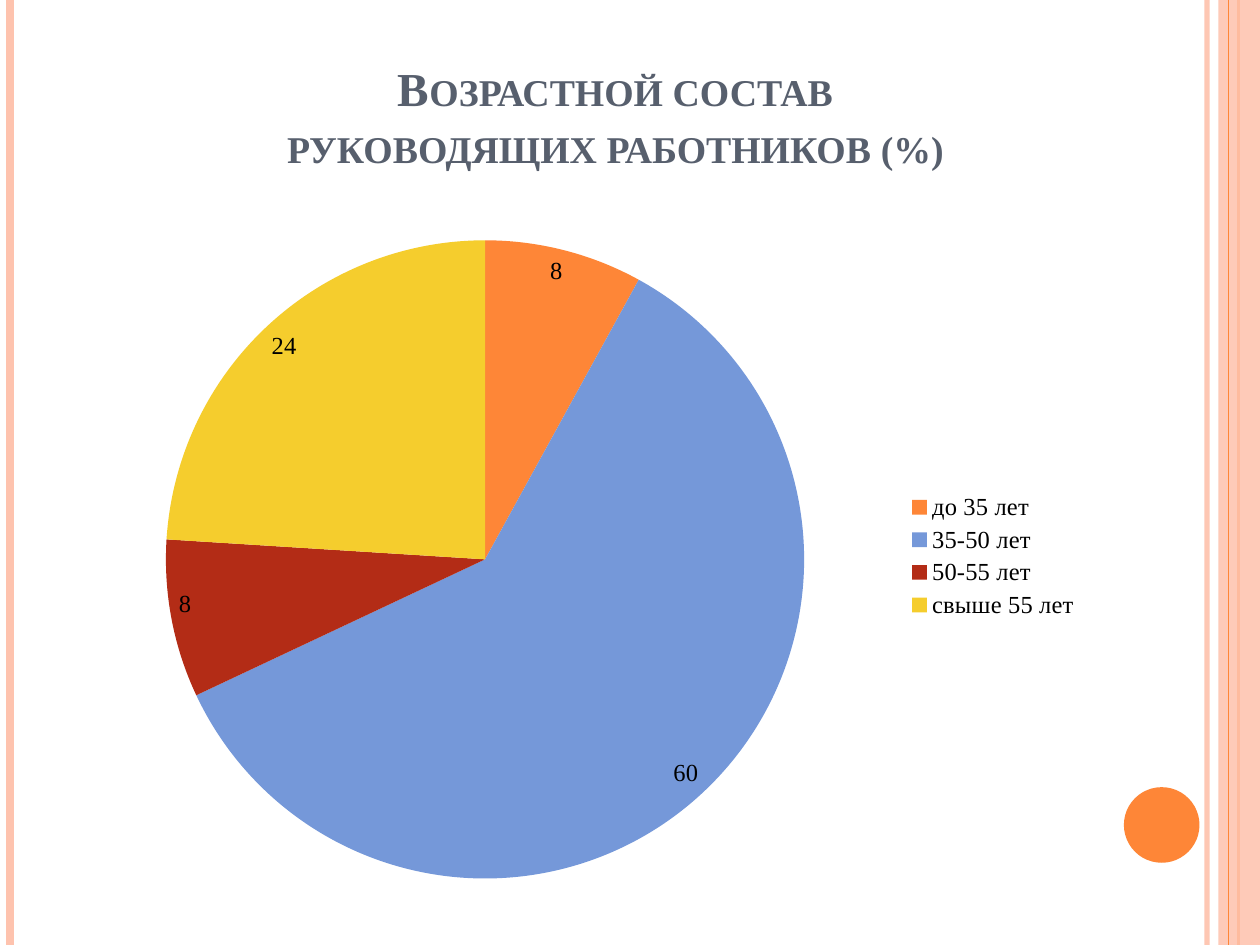
from lxml import etree
from pptx import Presentation
from pptx.chart.data import CategoryChartData
from pptx.dml.color import RGBColor
from pptx.enum.chart import XL_CHART_TYPE as ChartType
from pptx.enum.chart import XL_LABEL_POSITION as LabelPosition
from pptx.enum.chart import XL_LEGEND_POSITION as LegendPosition
from pptx.enum.shapes import MSO_CONNECTOR as Connector
from pptx.enum.shapes import MSO_SHAPE as Shape
from pptx.enum.text import MSO_ANCHOR as Anchor
from pptx.enum.text import MSO_AUTO_SIZE as AutoSize
from pptx.enum.text import PP_ALIGN as Align
from pptx.oxml import parse_xml
from pptx.oxml.ns import nsdecls, qn
from pptx.util import Inches, Pt

PEACH = RGBColor(0xFE, 0xC3, 0xAE)
ORANGE = RGBColor(0xFE, 0x86, 0x37)
BLUE = RGBColor(0x75, 0x98, 0xD9)
RED = RGBColor(0xB3, 0x2C, 0x16)
YELLOW = RGBColor(0xF5, 0xCD, 0x2D)
SLATE = RGBColor(0x57, 0x5F, 0x6D)
BLACK = RGBColor(0, 0, 0)
FONT = "Times New Roman"

AGE_GROUPS = [  # label, share in percent, slice colour
    ("до 35 лет", 8, ORANGE),
    ("35-50 лет", 60, BLUE),
    ("50-55 лет", 8, RED),
    ("свыше 55 лет", 24, YELLOW),
]


def write_text(paragraph, text, size, color, bold=False, small_caps=False, align=Align.LEFT):
    """Fill a paragraph with formatted lines, split at line ends."""
    paragraph.alignment = align
    for index, line in enumerate(text.split("\n")):
        if index:
            paragraph.add_line_break()
        run = paragraph.add_run()
        run.text = line
        font = run.font
        font.name, font.size, font.bold = FONT, Pt(size), bold
        font.color.rgb = color
        if small_caps:
            font._element.set("cap", "small")


def set_opacity(fill_parent, percent):
    color = fill_parent.find(".//" + qn("a:srgbClr"))
    etree.SubElement(color, qn("a:alpha")).set("val", str(percent * 1000))


class SlideBuilder:
    """Places elements by shares of the slide's width and height."""

    def __init__(self, deck):
        self.width, self.height = deck.slide_width, deck.slide_height
        self.slide = deck.slides.add_slide(deck.slide_layouts[5])
        self.shapes = self.slide.shapes

    def box(self, left, top, width, height):
        return (int(left * self.width), int(top * self.height),
                int(width * self.width), int(height * self.height))

    def title(self, text, area):
        heading = self.shapes.title
        heading.left, heading.top, heading.width, heading.height = self.box(*area)
        frame = heading.text_frame
        frame.word_wrap, frame.auto_size = True, AutoSize.NONE
        frame.vertical_anchor = Anchor.BOTTOM
        frame.margin_bottom = Inches(0.48)
        write_text(frame.paragraphs[0], text, size=27, color=SLATE, bold=True,
                   small_caps=True, align=Align.CENTER)

    def stripe(self, x, color, weight, opacity=100):
        x = int(x * self.width)
        line = self.shapes.add_connector(Connector.STRAIGHT, x, 0, x, self.height)
        line.line.color.rgb, line.line.width = color, Pt(weight)
        properties = line._element.spPr
        if opacity < 100:
            set_opacity(properties, opacity)
        etree.SubElement(properties, qn("a:effectLst"))

    def figure(self, kind, area, color, opacity=100):
        figure = self.shapes.add_shape(kind, *self.box(*area))
        figure.shadow.inherit = False
        figure.fill.solid()
        figure.fill.fore_color.rgb = color
        figure.line.fill.background()
        if opacity < 100:
            set_opacity(figure._element.spPr, opacity)

    def pie(self, groups, area, plot_area):
        names, values, colors = zip(*groups)
        data = CategoryChartData()
        data.categories = names
        data.add_series("Series 1", values)
        chart = self.shapes.add_chart(ChartType.PIE, *self.box(*area), data).chart
        chart.has_title = False
        chart.font.name, chart.font.size = FONT, Pt(14)
        chart.font.color.rgb = BLACK
        chart.has_legend = True
        chart.legend.position = LegendPosition.RIGHT
        chart.legend.include_in_layout = False

        # Slices and their values
        plot = chart.plots[0]
        plot.vary_by_categories = True
        for index, color in enumerate(colors):
            fill = plot.series[0].points[index].format.fill
            fill.solid()
            fill.fore_color.rgb = color
        plot.has_data_labels = True
        plot.data_labels.show_value = True
        plot.data_labels.show_percentage = False
        plot.data_labels.position = LabelPosition.INSIDE_END

        # Fixed place of the pie inside the chart
        settings = "".join(f'<c:{key} val="{value}"/>' for key, value in
                           [("layoutTarget", "inner"), ("xMode", "edge"), ("yMode", "edge"),
                            *zip("xywh", plot_area)])
        plot_xml = chart._chartSpace.chart.plotArea
        for old_layout in plot_xml.findall(qn("c:layout")):
            plot_xml.remove(old_layout)
        plot_xml.insert(0, parse_xml(
            f'<c:layout {nsdecls("c")}><c:manualLayout>{settings}</c:manualLayout></c:layout>'))


def main():
    deck = Presentation()
    deck.slide_width, deck.slide_height = Inches(10), Inches(7.5)
    page = SlideBuilder(deck)

    # Side stripes and corner circle
    page.stripe(0.958, PEACH, 3, opacity=93)
    page.stripe(0.008, PEACH, 4.5)
    page.stripe(0.983, ORANGE, 1.5)
    page.figure(Shape.RECTANGLE, (0.967, 0, 0.033, 1), PEACH, opacity=87)
    page.stripe(0.975, ORANGE, 0.75)
    page.figure(Shape.OVAL, (0.892, 0.833, 0.06, 0.08), ORANGE)

    # Heading and age chart
    page.title("Возрастной состав\nруководящих работников (%)", (0.043, 0.08, 0.891, 0.167))
    page.pie(AGE_GROUPS, (0.05, 0.233, 0.817, 0.711), plot_area=(0.1, 0.03, 0.62, 0.95))

    deck.save("out.pptx")


if __name__ == "__main__":
    main()
